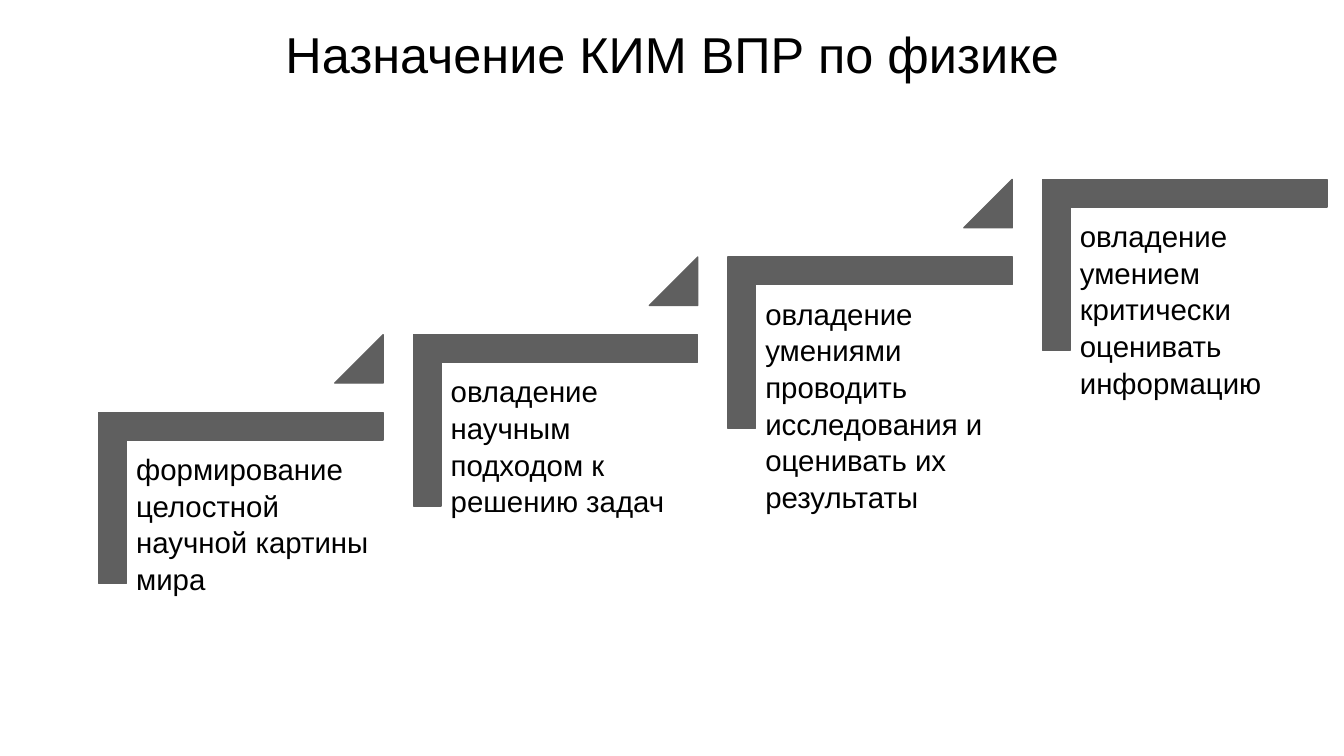
import pptx
import pptx.util
import pptx.dml.color
import pptx.enum.shapes
import pptx.enum.text

Inches = pptx.util.Inches
Pt = pptx.util.Pt
MSO_SHAPE = pptx.enum.shapes.MSO_SHAPE

GREY = "5F5F5F"
BLACK = "000000"
GOALS = [
    "формирование целостной научной картины мира",
    "овладение научным подходом к решению задач",
    "овладение умениями проводить исследования и оценивать их результаты",
    "овладение умением критически оценивать информацию",
]
STEP_WIDTH, STEP_HEIGHT = 2.82, 1.7
STEP_RUN, STEP_RISE = 3.12, 0.77


def colour(value):
    return pptx.dml.color.RGBColor.from_string(value)


def set_font(paragraph, size):
    paragraph.font.name = "Arial"
    paragraph.font.size = Pt(size)
    paragraph.font.color.rgb = colour(BLACK)


def add_title(slide, left, top, width, height):
    title = slide.shapes.title
    title.left, title.top = Inches(left), Inches(top)
    title.width, title.height = Inches(width), Inches(height)
    frame = title.text_frame
    frame.text = "Назначение КИМ ВПР по физике"
    frame.word_wrap = True
    frame.vertical_anchor = pptx.enum.text.MSO_ANCHOR.MIDDLE
    frame.paragraphs[0].alignment = pptx.enum.text.PP_ALIGN.CENTER
    set_font(frame.paragraphs[0], 36)


def add_grey_shape(slide, kind, left, top, width, height, adjustments):
    shape = slide.shapes.add_shape(
        kind, Inches(left), Inches(top), Inches(width), Inches(height))
    for index, value in enumerate(adjustments):
        shape.adjustments[index] = value
    shape.shadow.inherit = False
    shape.fill.solid()
    shape.fill.fore_color.rgb = colour(GREY)
    shape.line.color.rgb = colour(GREY)
    shape.line.width = Pt(1)
    return shape


def add_goal(slide, text, left, top, width, height):
    goal = slide.shapes.add_textbox(
        Inches(left), Inches(top), Inches(width), Inches(height))
    frame = goal.text_frame
    frame.word_wrap = True
    frame.margin_left = frame.margin_right = Inches(0.09)
    frame.margin_top = frame.margin_bottom = Inches(0.09)
    frame.text = text
    frame.paragraphs[0].line_spacing = 1.04
    set_font(frame.paragraphs[0], 21)


def add_step(slide, text, left, top, width, height, leads_on):
    inset = (width - height) / 2
    bracket = add_grey_shape(slide, MSO_SHAPE.CORNER, left + inset, top - inset,
                             height, width, [0.161, 0.161])
    bracket.rotation = 90
    add_goal(slide, text, left + 0.28, top + 0.28, 2.55, 2.23)
    if leads_on:
        add_grey_shape(slide, MSO_SHAPE.ISOSCELES_TRIANGLE,
                       left + width - 0.48, top - STEP_RISE, 0.48, 0.48, [1])


def add_staircase(slide, left, bottom_step_top):
    for index, text in enumerate(GOALS):
        add_step(slide, text, left + index * STEP_RUN,
                 bottom_step_top - index * STEP_RISE,
                 STEP_WIDTH, STEP_HEIGHT, index < len(GOALS) - 1)


def main():
    presentation = pptx.Presentation()
    presentation.slide_width = Inches(13.33)
    presentation.slide_height = Inches(7.5)
    slide = presentation.slides.add_slide(presentation.slide_layouts[5])
    add_title(slide, 0.67, 0.21, 12, 0.64)
    add_staircase(slide, 0.98, 4.09)
    presentation.save("out.pptx")


if __name__ == "__main__":
    main()
